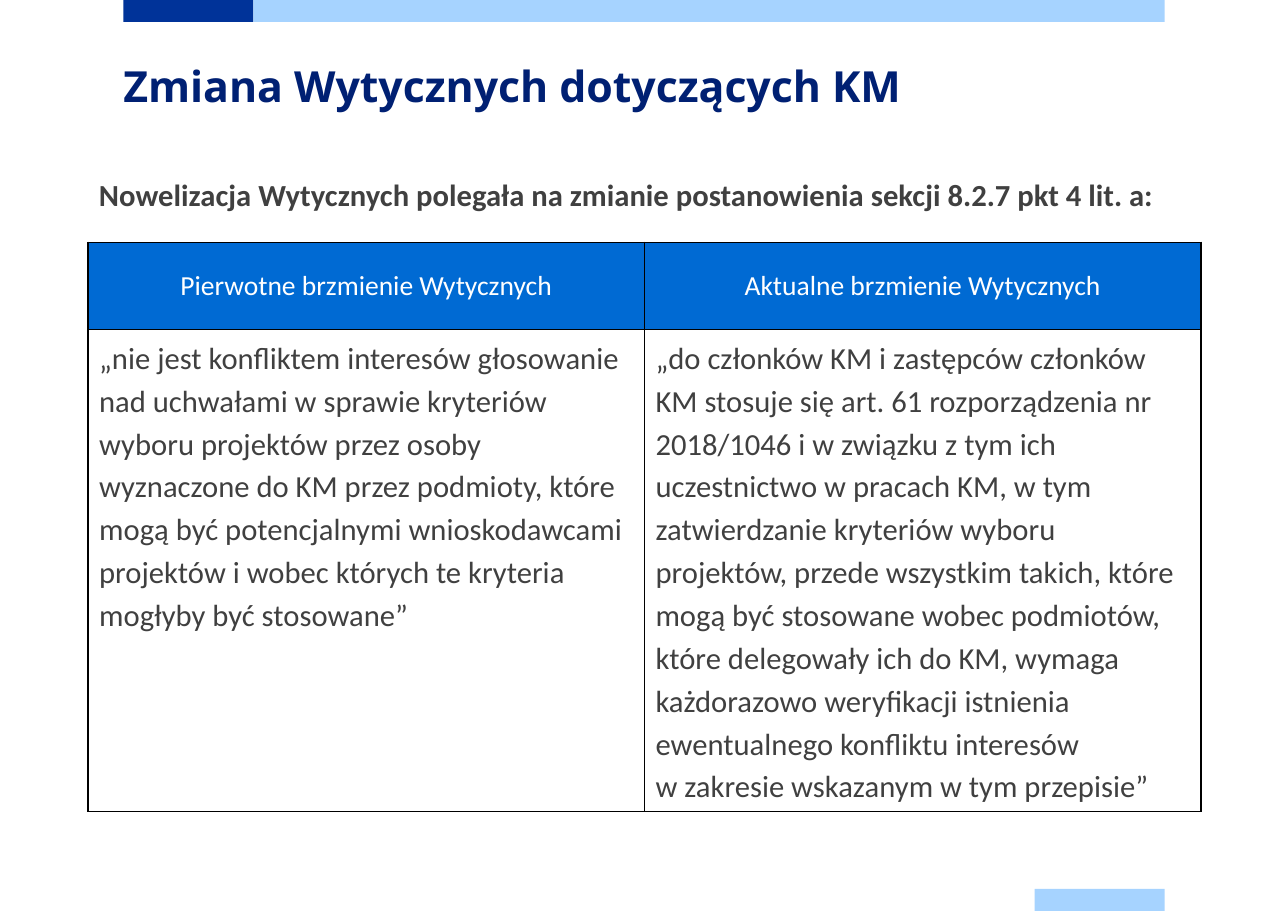
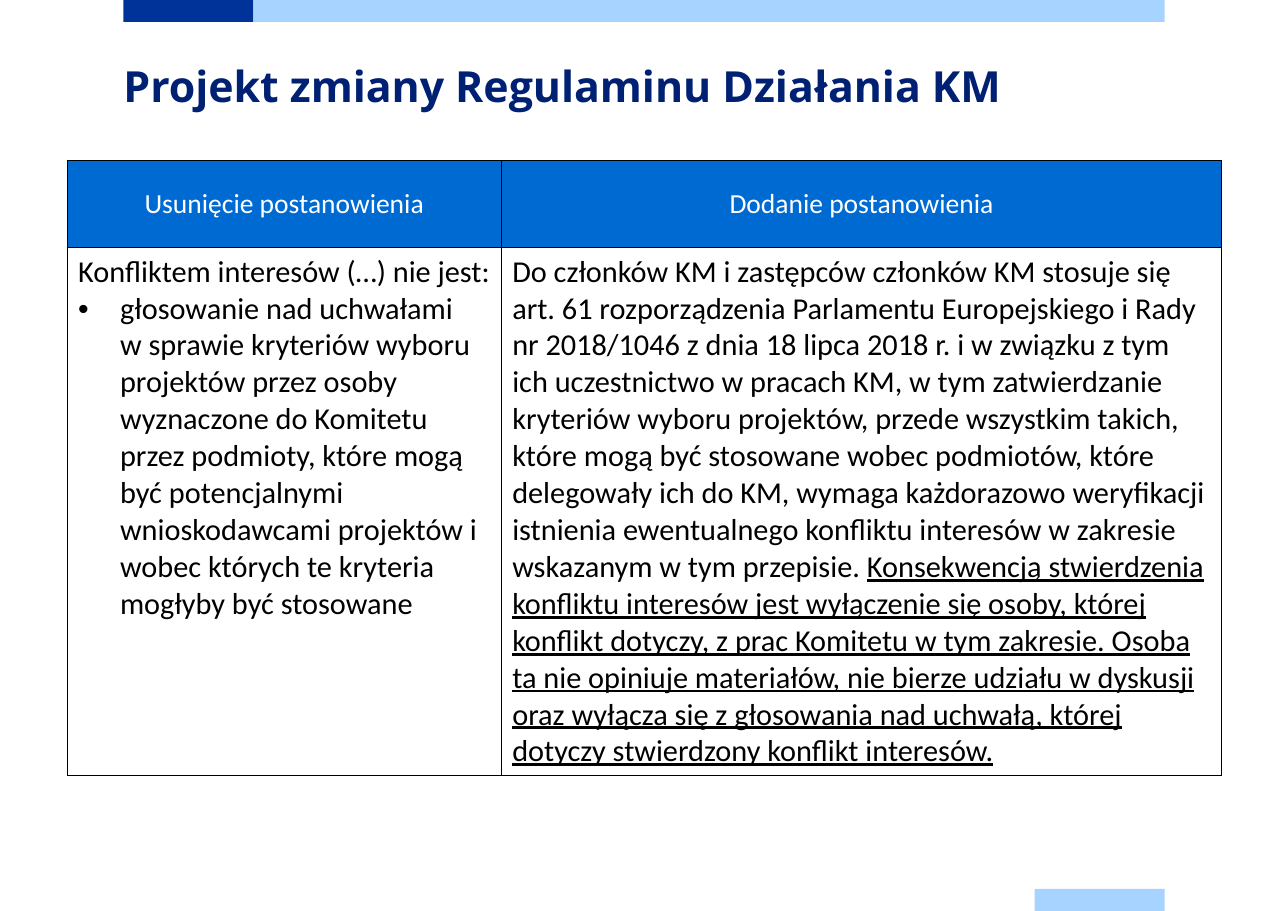
from dataclasses import dataclass

from lxml.etree import SubElement
from pptx import Presentation
from pptx.dml.color import RGBColor
from pptx.enum.shapes import MSO_SHAPE
from pptx.enum.text import MSO_ANCHOR, MSO_AUTO_SIZE, PP_ALIGN
from pptx.oxml import parse_xml
from pptx.oxml.ns import nsdecls, qn
from pptx.util import Inches, Pt


@dataclass(frozen=True)
class Theme:
    navy: str = "003399"
    sky: str = "A6D3FF"
    title: str = "002073"
    header: str = "006AD3"
    white: str = "FFFFFF"
    grey: str = "404040"
    black: str = "000000"
    title_font: str = "Open Sans"
    body_font: str = "Calibri"
    title_size: float = 28
    header_size: float = 18
    body_size: float = 20
    rule_size: float = 19.8
    title_spacing: float = 36
    body_spacing: float = 28


T = Theme()
LEFT, RIGHT = 1.12, 10.57
BAND_H, ACCENT_W = 0.2, 1.18
SLIDE_W, SLIDE_H = 11.69, 8.27
HEADER_H = 0.79


def style(p, font, size, color, bold=False, spacing=None):
    if spacing:
        p.line_spacing = Pt(spacing)
    for r in p.runs:
        r.font.name = font
        r.font.size = Pt(size)
        r.font.bold = bold
        r.font.color.rgb = RGBColor.from_string(color)


def add_band(slide, left, top, width, color):
    sp = slide.shapes.add_shape(
        MSO_SHAPE.RECTANGLE, Inches(left), Inches(top), Inches(width), Inches(BAND_H)
    )
    sp.shadow.inherit = False
    sp.fill.solid()
    sp.fill.fore_color.rgb = RGBColor.from_string(color)
    sp.line.fill.background()
    return sp


def move_bands_to_layout(slide):
    tree = slide.slide_layout.shapes.element
    bands = (
        (LEFT, 0, ACCENT_W, T.navy),
        (LEFT + ACCENT_W, 0, RIGHT - LEFT - ACCENT_W, T.sky),
        (RIGHT - ACCENT_W, SLIDE_H - BAND_H, ACCENT_W, T.sky),
    )
    for i, band in enumerate(bands):
        tree.insert(2 + i, add_band(slide, *band).element)


def add_title_slide(prs, text):
    slide = prs.slides.add_slide(prs.slide_layouts[5])
    sp = slide.shapes.title
    sp.left, sp.top = Inches(LEFT), Inches(0.51)
    sp.width, sp.height = Inches(RIGHT - LEFT), Inches(0.63)
    tf = sp.text_frame
    tf.margin_left = tf.margin_right = tf.margin_top = tf.margin_bottom = 0
    tf.auto_size = MSO_AUTO_SIZE.NONE
    tf.vertical_anchor = MSO_ANCHOR.TOP
    tf.text = text
    p = tf.paragraphs[0]
    p.alignment = PP_ALIGN.LEFT
    style(p, T.title_font, T.title_size, T.title, True, T.title_spacing)
    return slide


def add_lead(slide, text):
    sp = slide.shapes.add_textbox(Inches(0.8), Inches(1.38), Inches(10.1), Inches(0.57))
    tf = sp.text_frame
    tf.word_wrap = True
    tf.text = text
    style(tf.paragraphs[0], T.body_font, T.body_size, T.grey, True, T.title_spacing)


def add_bullet(p, indent):
    pPr = p._p.get_or_add_pPr()
    pPr.set("marL", str(Inches(indent)))
    pPr.set("indent", str(-Inches(indent)))
    SubElement(pPr, qn("a:buFont")).set("typeface", "Arial")
    SubElement(pPr, qn("a:buChar")).set("char", "•")


def set_borders(cell):
    tcPr = cell._tc.get_or_add_tcPr()
    for i, side in enumerate("LRTB"):
        tcPr.insert(i, parse_xml(
            f'<a:ln{side} {nsdecls("a")} w="{Pt(1)}"><a:solidFill>'
            f'<a:srgbClr val="{T.black}"/></a:solidFill></a:ln{side}>'
        ))


def add_comparison(slide, left, top, widths, body_h, headers):
    table = slide.shapes.add_table(
        2, len(widths), Inches(left), Inches(top),
        Inches(sum(widths)), Inches(HEADER_H + body_h),
    ).table
    table.first_row = table.horz_banding = False
    table.rows[0].height, table.rows[1].height = Inches(HEADER_H), Inches(body_h)
    for i, (width, header) in enumerate(zip(widths, headers)):
        table.columns[i].width = Inches(width)
        cell, body = table.cell(0, i), table.cell(1, i)
        cell.fill.solid()
        cell.fill.fore_color.rgb = RGBColor.from_string(T.header)
        cell.vertical_anchor = MSO_ANCHOR.MIDDLE
        cell.text_frame.text = header
        p = cell.text_frame.paragraphs[0]
        p.alignment = PP_ALIGN.CENTER
        style(p, T.body_font, T.header_size, T.white)
        body.fill.background()
        set_borders(cell)
        set_borders(body)
    return [table.cell(1, i).text_frame for i in range(len(widths))]


def build_guidelines(prs):
    slide = add_title_slide(prs, "Zmiana Wytycznych dotyczących KM")
    move_bands_to_layout(slide)
    frames = add_comparison(
        slide, 0.8, 2.2, (5.05, 5.05), 4.35,
        ("Pierwotne brzmienie Wytycznych", "Aktualne brzmienie Wytycznych"),
    )
    texts = (
        "„nie jest konfliktem interesów głosowanie nad uchwałami w sprawie kryteriów "
        "wyboru projektów przez osoby wyznaczone do KM przez podmioty, które mogą być "
        "potencjalnymi wnioskodawcami projektów i wobec których te kryteria mogłyby "
        "być stosowane”",
        "„do członków KM i zastępców członków KM stosuje się art. 61 rozporządzenia nr "
        "2018/1046 i w związku z tym ich uczestnictwo w pracach KM, w tym zatwierdzanie "
        "kryteriów wyboru projektów, przede wszystkim takich, które mogą być stosowane "
        "wobec podmiotów, które delegowały ich do KM, wymaga każdorazowo weryfikacji "
        "istnienia ewentualnego konfliktu interesów \vw zakresie wskazanym w tym przepisie”",
    )
    for tf, text in zip(frames, texts):
        p = tf.paragraphs[0]
        p.text = text
        style(p, T.body_font, T.body_size, T.grey, spacing=T.body_spacing)
    add_lead(
        slide,
        "Nowelizacja Wytycznych polegała na zmianie postanowienia sekcji 8.2.7 pkt 4 lit. a:",
    )


def build_rules(prs):
    slide = add_title_slide(prs, "Projekt zmiany Regulaminu Działania KM")
    removed, added = add_comparison(
        slide, 0.61, 1.46, (3.94, 6.54), 4.73,
        ("Usunięcie postanowienia", "Dodanie postanowienia"),
    )
    removed.text = "Konfliktem interesów (…) nie jest:"
    p = removed.add_paragraph()
    p.text = (
        "głosowanie nad uchwałami \vw sprawie kryteriów wyboru projektów przez osoby "
        "wyznaczone do Komitetu przez podmioty, które mogą być potencjalnymi "
        "wnioskodawcami projektów i wobec których te kryteria mogłyby być stosowane"
    )
    add_bullet(p, 0.38)
    added.text = (
        "Do członków KM i zastępców członków KM stosuje się art. 61 rozporządzenia "
        "Parlamentu Europejskiego i Rady nr 2018/1046 z dnia 18 lipca 2018 r. i w związku "
        "z tym ich uczestnictwo w pracach KM, w tym zatwierdzanie kryteriów wyboru "
        "projektów, przede wszystkim takich, które mogą być stosowane wobec podmiotów, "
        "które delegowały ich do KM, wymaga każdorazowo weryfikacji istnienia "
        "ewentualnego konfliktu interesów w zakresie wskazanym w tym przepisie. "
    )
    r = added.paragraphs[0].add_run()
    r.text = (
        "Konsekwencją stwierdzenia konfliktu interesów jest wyłączenie się osoby, której "
        "konflikt dotyczy, z prac Komitetu w tym zakresie. Osoba ta nie opiniuje "
        "materiałów, nie bierze udziału w dyskusji oraz wyłącza się z głosowania nad "
        "uchwałą, której dotyczy stwierdzony konflikt interesów."
    )
    r.font.underline = True
    for p in (*removed.paragraphs, *added.paragraphs):
        style(p, T.body_font, T.rule_size, T.black)


def main():
    prs = Presentation()
    prs.slide_width, prs.slide_height = Inches(SLIDE_W), Inches(SLIDE_H)
    build_guidelines(prs)
    build_rules(prs)
    prs.save("out.pptx")


if __name__ == "__main__":
    main()
